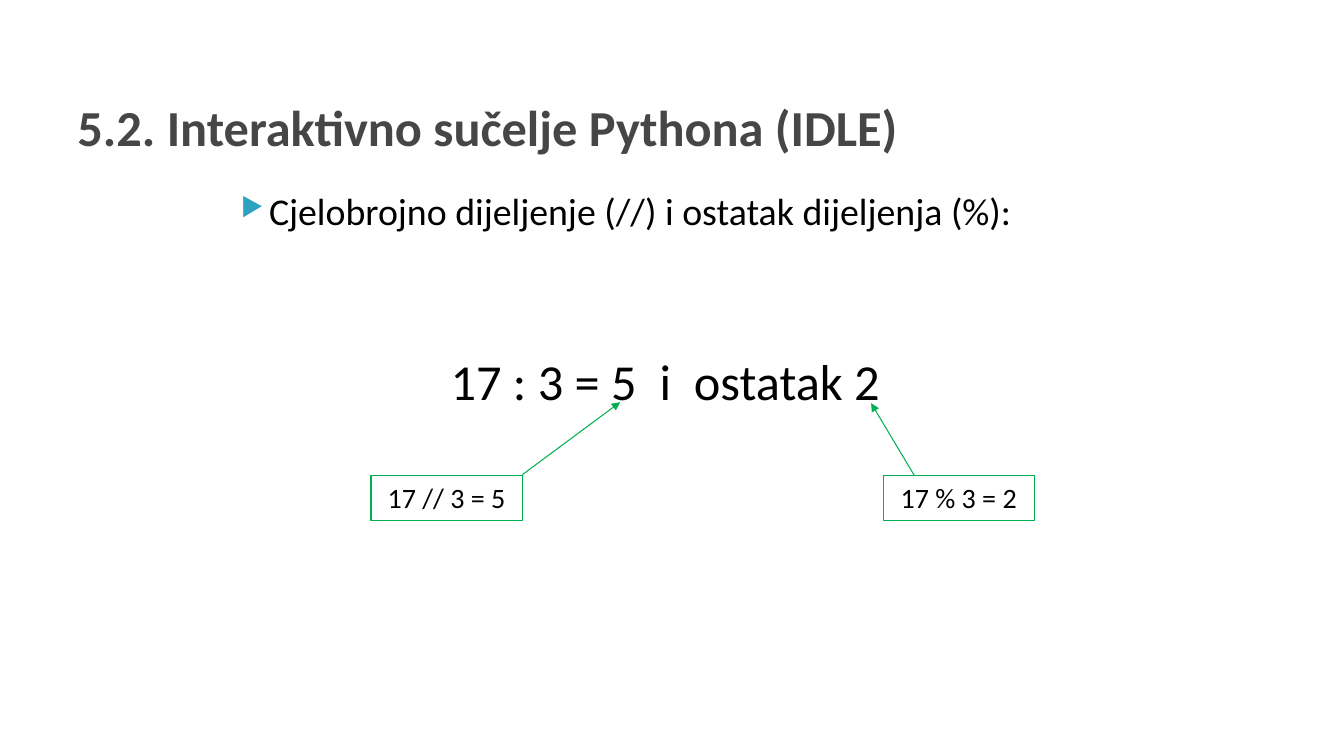
import pptx
import pptx.util
import pptx.dml.color
import pptx.enum.shapes
import pptx.enum.text
import pptx.oxml
import pptx.oxml.ns

PX = 9144
FONT = "Calibri"
COLORS = {"title": "464646", "text": "000000", "accent": "00B050", "bullet": "2DA2BF"}
ALIGN = pptx.enum.text.PP_ALIGN
ANCHOR = pptx.enum.text.MSO_ANCHOR


def px(n):
    return pptx.util.Emu(n * PX)


def rgb(name):
    return pptx.dml.color.RGBColor.from_string(COLORS[name])


def add_element(parent, tag, **attrs):
    el = pptx.oxml.parse_xml(f"<a:{tag} {pptx.oxml.ns.nsdecls('a')}/>")
    for key, value in attrs.items():
        el.set(key, value)
    parent.append(el)
    return el


def write_text(sp, text, size, color="text", bold=False, align=ALIGN.LEFT, anchor=ANCHOR.TOP):
    tf = sp.text_frame
    tf.word_wrap = True
    tf.vertical_anchor = anchor
    p = tf.paragraphs[0]
    p.alignment = align
    r = p.add_run()
    r.text = text
    r.font.name = FONT
    r.font.size = pptx.util.Pt(size)
    r.font.bold = bold
    r.font.color.rgb = rgb(color)
    return p


def add_text(s, box, text, size, **style):
    sp = s.shapes.add_textbox(*map(px, box))
    return write_text(sp, text, size, **style)


def add_bullet(p):
    pPr = p._p.get_or_add_pPr()
    pPr.set("marL", str(px(40)))
    pPr.set("indent", str(px(-28)))
    buClr = add_element(pPr, "buClr")
    add_element(buClr, "srgbClr", val=COLORS["bullet"])
    add_element(pPr, "buSzPct", val="68000")
    add_element(pPr, "buChar", char="▶")


def add_result_box(s, left, text):
    rect = pptx.enum.shapes.MSO_SHAPE.RECTANGLE
    sp = s.shapes.add_shape(rect, *map(px, (left, 472, 150, 44)))
    sp.shadow.inherit = False
    sp.fill.background()
    sp.line.color.rgb = rgb("accent")
    sp.line.width = pptx.util.Pt(0.75)
    write_text(sp, text, 20, align=ALIGN.CENTER)


def add_arrow(s, start, end):
    straight = pptx.enum.shapes.MSO_CONNECTOR.STRAIGHT
    c = s.shapes.add_connector(straight, *map(px, start + end))
    c.line.color.rgb = rgb("accent")
    c.line.width = pptx.util.Pt(0.75)
    add_element(c.line._get_or_add_ln(), "tailEnd", type="triangle")
    add_element(c._element.spPr, "effectLst")


def main():
    prs = pptx.Presentation()
    prs.slide_width, prs.slide_height = px(1333), px(750)
    s = prs.slides.add_slide(prs.slide_layouts[6])

    add_text(s, (67, 69, 1200, 112), "5.2. Interaktivno sučelje Pythona (IDLE)", 36,
             color="title", bold=True, anchor=ANCHOR.MIDDLE)
    add_text(s, (437, 342, 472, 71), "17 : 3 = 5  i  ostatak 2", 36)

    add_result_box(s, 368, "17 // 3 = 5")
    add_arrow(s, (518, 471), (615, 399))
    add_result_box(s, 876, "17 % 3 = 2")
    add_arrow(s, (907, 472), (864, 400))

    p = add_text(s, (217, 181, 900, 137),
                 "Cjelobrojno dijeljenje (//) i ostatak dijeljenja (%): ", 27,
                 align=ALIGN.JUSTIFY)
    add_bullet(p)

    prs.save("out.pptx")


if __name__ == "__main__":
    main()
